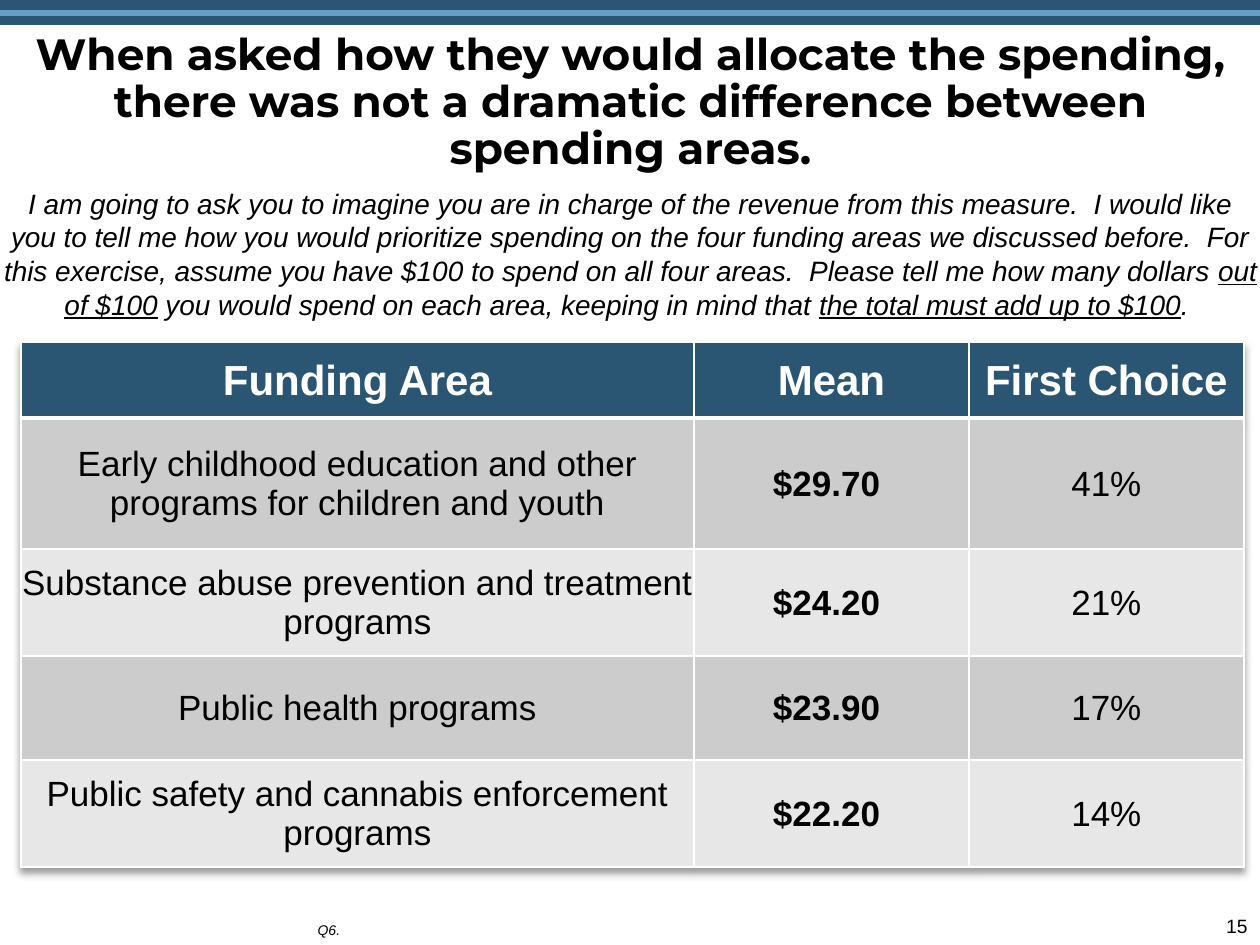
"""Build the slide on how respondents would allocate spending across funding areas."""
from lxml.etree import SubElement
from pptx import Presentation
from pptx.dml.color import RGBColor
from pptx.enum.shapes import MSO_SHAPE as Shape
from pptx.enum.text import MSO_ANCHOR as Anchor, MSO_AUTO_SIZE as AutoSize, PP_ALIGN as Align
from pptx.oxml import parse_xml
from pptx.oxml.ns import nsdecls, qn
from pptx.util import Emu, Pt


def px(*lengths):
    return [Emu(round(length * 914400 / 126)) for length in lengths]


def style(font, size, color="000000", bold=False, italic=False, name="Arial"):
    font.name, font.size, font.bold, font.italic = name, Pt(size), bold, italic
    font.color.rgb = RGBColor.from_string(color)


NAVY, SKY, WHITE = "2A5673", "639FC6", "FFFFFF"
BANDS = ["E7E7E7", "CCCCCC"]
ROWS = [
    ("Funding Area", "Mean", "First Choice"),
    ("Early childhood education and other programs for children and youth", "$29.70 ", "41%"),
    ("Substance abuse prevention and treatment programs", "$24.20 ", "21%"),
    ("Public health programs", "$23.90 ", "17%"),
    ("Public safety and cannabis enforcement programs", "$22.20 ", "14%"),
]
QUESTION = [
    ("I am going to ask you to imagine you are in charge of the revenue from this measure.  "
     "I would like you to tell me how you would prioritize spending on the four funding areas "
     "we discussed before.  For this exercise, assume you have $100 to spend on all four areas.  "
     "Please tell me how many dollars ", False),
    ("out of $100", True),
    (" you would spend on each area, keeping in mind that ", False),
    ("the total must add up to $100", True),
    (". ", False),
]

deck = Presentation()
deck.slide_width, deck.slide_height = px(1260, 945)
page = deck.slides.add_slide(deck.slide_layouts[1])

for top, height, color in [(0, 25, NAVY), (10, 6, SKY)]:
    bar = page.shapes.add_shape(Shape.RECTANGLE, *px(0, top, 1260, height))
    bar.shadow.inherit = False
    bar.fill.solid()
    bar.fill.fore_color.rgb = RGBColor.from_string(color)
    bar.line.fill.background()

title = page.shapes.title
title.left, title.top, title.width, title.height = px(19, 26, 1223, 158)
title.text_frame.text = ("When asked how they would allocate the spending, there was not "
                         "a dramatic difference between spending areas.")
title.text_frame.auto_size = AutoSize.NONE
title.text_frame.vertical_anchor = Anchor.TOP
para = title.text_frame.paragraphs[0]
para.alignment, para.line_spacing = Align.CENTER, 0.9
style(para.font, 25, bold=True, name="Montserrat")

footnote = page.placeholders[1]
footnote.left, footnote.top, footnote.width, footnote.height = px(305, 890, 918, 55)
footnote.text_frame.text = "Q6."
footnote.text_frame.auto_size = AutoSize.NONE
footnote.text_frame.vertical_anchor = Anchor.BOTTOM
para = footnote.text_frame.paragraphs[0]
para.line_spacing, para.space_before = 0.9, Pt(0)
properties = para._p.get_or_add_pPr()
properties.set("marL", "0")
properties.set("indent", "0")
SubElement(properties, qn("a:buNone"))
style(para.font, 8, italic=True)

question = page.shapes.add_textbox(*px(-10, 179, 1281, 149))
question.text_frame.word_wrap = True
question.text_frame.vertical_anchor = Anchor.MIDDLE
para = question.text_frame.paragraphs[0]
para.alignment = Align.CENTER
style(para.font, 16, italic=True)
for text, underlined in QUESTION:
    span = para.add_run()
    span.text = text
    span.font.underline = underlined

number = page.shapes.add_textbox(*px(1074, 908, 186, 37))
number.text_frame.word_wrap = True
number.text_frame.text = "15"
para = number.text_frame.paragraphs[0]
para.alignment = Align.RIGHT
style(para.font, 11)

table = page.shapes.add_table(5, 3, *px(21, 342, 1223, 525)).table
table._tbl.tblPr.insert(0, parse_xml(
    f'<a:effectLst {nsdecls("a")}><a:outerShdw blurRad="50800" dist="38100" dir="5400000">'
    '<a:srgbClr val="000000"><a:alpha val="40000"/></a:srgbClr></a:outerShdw></a:effectLst>'))
for column, width in zip(table.columns, px(673, 275, 275)):
    column.width = width
for row, height in zip(table.rows, px(76, 131, 107, 104, 107)):
    row.height = height
for row, texts in enumerate(ROWS):
    header = row == 0
    for column, text in enumerate(texts):
        cell = table.cell(row, column)
        cell.text = text
        cell.vertical_anchor = Anchor.MIDDLE
        cell.margin_left, cell.margin_right, cell.margin_top, cell.margin_bottom = px(1, 1, 1, 0)
        for side in "LRTB":
            width = Pt(3 if header and side == "B" else 1)
            cell._tc.get_or_add_tcPr().append(parse_xml(
                f'<a:ln{side} {nsdecls("a")} w="{width}"><a:solidFill>'
                f'<a:srgbClr val="{WHITE}"/></a:solidFill></a:ln{side}>'))
        cell.fill.solid()
        cell.fill.fore_color.rgb = RGBColor.from_string(NAVY if header else BANDS[row % 2])
        para = cell.text_frame.paragraphs[0]
        para.alignment = Align.CENTER
        style(para.font, 24 if header else 20, WHITE if header else "000000",
              bold=header or column == 1)

deck.save("out.pptx")
